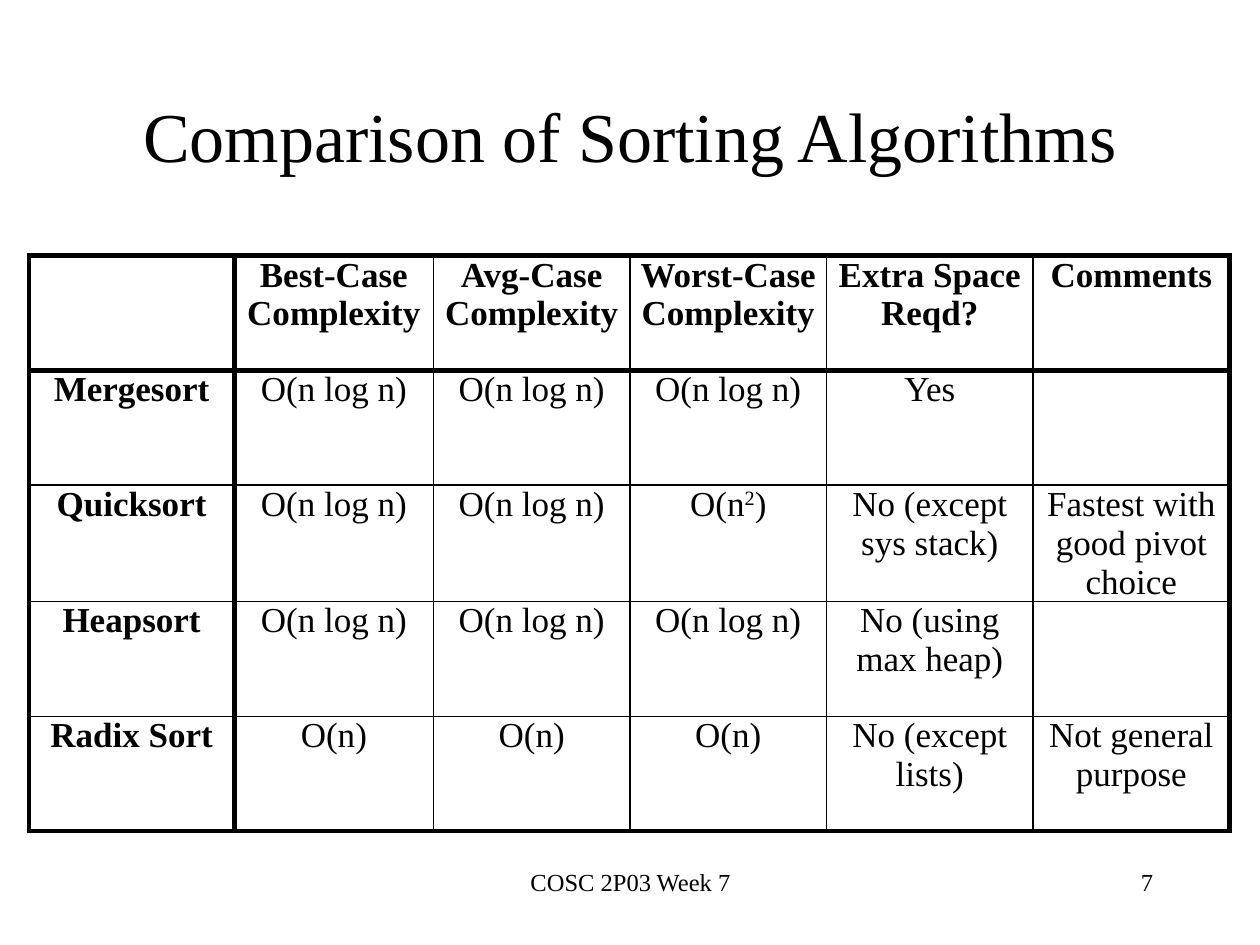
from lxml import etree
from pptx import Presentation
from pptx import util as u
from pptx.dml.color import RGBColor
from pptx.enum import text
from pptx.oxml import ns

FONT, INK = "Times New Roman", "000000"
HEADERS = ["", "Best-Case Complexity", "Avg-Case Complexity",
           "Worst-Case Complexity", "Extra Space Reqd?", "Comments"]
NLOGN = "O(n log n)"
ALGORITHMS = [
    ["Mergesort", NLOGN, NLOGN, NLOGN, "Yes", ""],
    ["Quicksort", NLOGN, NLOGN, "O(n^2^)", "No (except sys stack)",
     "Fastest with good pivot choice"],
    ["Heapsort", NLOGN, NLOGN, NLOGN, "No (using max heap)", ""],
    ["Radix Sort", "O(n)", "O(n)", "O(n)", "No (except lists)",
     "Not general purpose"],
]
ROWS = [HEADERS] + ALGORITHMS
COL_WIDTHS = [1.63, 1.58, 1.56, 1.56, 1.64, 1.56]
ROW_HEIGHT = 0.91
THICK, THIN = 3, 1


def write(p, words, size, align, bold=False):
    """Fill a paragraph; a part between ^ marks is superscript."""
    p.alignment = align
    p.font.name, p.font.size, p.font.bold = FONT, u.Pt(size), bold
    p.font.color.rgb = RGBColor.from_string(INK)
    for i, part in enumerate(words.split("^")):
        r = p.add_run()
        r.text = part
        if i % 2:
            r.font._element.set("baseline", "30000")


def add_border(cell, side, points):
    ln = etree.SubElement(cell._tc.get_or_add_tcPr(), ns.qn("a:ln" + side),
                          w=str(u.Pt(points)))
    fill = etree.SubElement(ln, ns.qn("a:solidFill"))
    etree.SubElement(fill, ns.qn("a:srgbClr"), val=INK)


prs = Presentation()
prs.slide_width, prs.slide_height = u.Inches(10), u.Inches(7.5)
s = prs.slides.add_slide(prs.slide_layouts[5])
center, right = text.PP_ALIGN.CENTER, text.PP_ALIGN.RIGHT

# Title
title = s.shapes.title
title.left, title.top = u.Inches(0.75), u.Inches(0.44)
title.width, title.height = u.Inches(8.5), u.Inches(1.25)
title.text_frame.vertical_anchor = text.MSO_ANCHOR.MIDDLE
write(title.text_frame.paragraphs[0], "Comparison of Sorting Algorithms", 40, center)

# Table: heavy rules around the outside, the header row and the name column
n_rows, n_cols = len(ROWS), len(HEADERS)
table = s.shapes.add_table(
    n_rows, n_cols, u.Inches(0.23), u.Inches(2.03),
    u.Inches(sum(COL_WIDTHS)), u.Inches(ROW_HEIGHT * n_rows)).table
table.first_row = table.horz_banding = False
for column, width in zip(table.columns, COL_WIDTHS):
    column.width = u.Inches(width)
for i, row in enumerate(ROWS):
    table.rows[i].height = u.Inches(ROW_HEIGHT)
    for j, words in enumerate(row):
        cell = table.cell(i, j)
        cell.margin_left = cell.margin_right = 0
        cell.margin_top = cell.margin_bottom = 0
        if words:
            write(cell.text_frame.paragraphs[0], words, 20, center,
                  bold=i == 0 or j == 0)
        for side, edge, last in (("L", j, n_cols), ("R", j + 1, n_cols),
                                 ("T", i, n_rows), ("B", i + 1, n_rows)):
            add_border(cell, side, THICK if edge in (0, 1, last) else THIN)
        cell.fill.background()

# Page number and footer
for words, left, width, align in (("7", 7.17, 2.08, right),
                                  ("COSC 2P03 Week 7", 3.42, 3.17, center)):
    tf = s.shapes.add_textbox(u.Inches(left), u.Inches(6.83),
                              u.Inches(width), u.Inches(0.5)).text_frame
    tf.word_wrap = True
    write(tf.paragraphs[0], words, 14, align)

prs.save("out.pptx")
